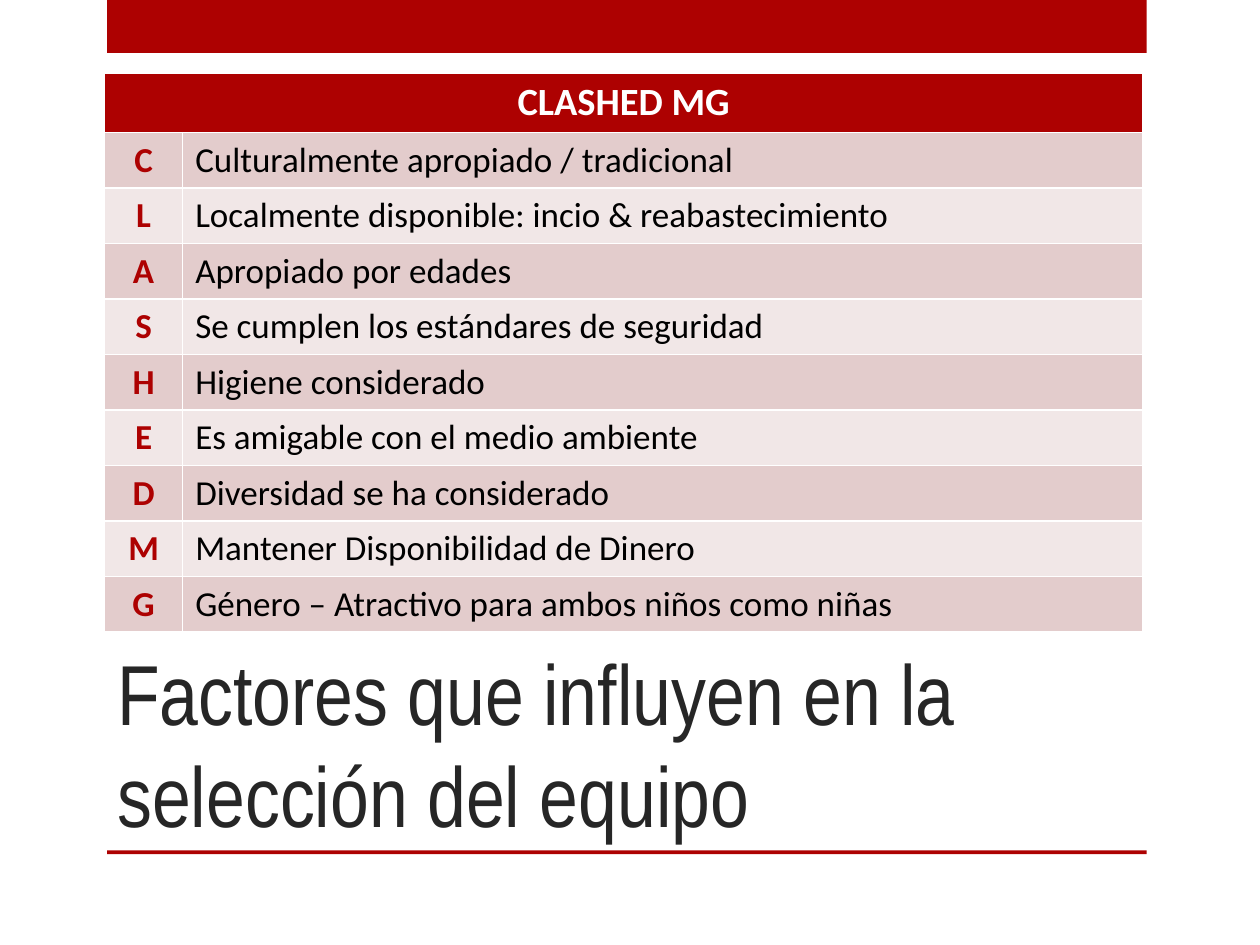
from pptx import Presentation
from pptx.dml.color import RGBColor
from pptx.enum.shapes import MSO_SHAPE
from pptx.enum.text import MSO_ANCHOR, MSO_AUTO_SIZE, PP_ALIGN
from pptx.util import Inches, Pt

RECTANGLE = MSO_SHAPE.RECTANGLE
BOTTOM = MSO_ANCHOR.BOTTOM
NO_AUTOFIT = MSO_AUTO_SIZE.NONE
LEFT, CENTER = PP_ALIGN.LEFT, PP_ALIGN.CENTER

# Content
TITLE = "Factores que influyen en la selección del equipo"
HEADING = "CLASHED MG"
FACTORS = [
    ("C", "Culturalmente apropiado / tradicional"),
    ("L", "Localmente disponible: incio & reabastecimiento"),
    ("A", "Apropiado por edades"),
    ("S", "Se cumplen los estándares de seguridad"),
    ("H", "Higiene considerado"),
    ("E", "Es amigable con el medio ambiente"),
    ("D", "Diversidad se ha considerado"),
    ("M", "Mantener Disponibilidad de Dinero"),
    ("G", "Género – Atractivo para ambos niños como niñas"),
]
COLORS = {
    "red": "AD0101",
    "title": "262626",
    "text": "000000",
    "white": "FFFFFF",
    "dark_band": "E3CCCC",
    "light_band": "F1E7E7",
}

# Layout, in inches
BARS = [(0, 0.42), (6.75, 0.03)]  # top, height
BAR_LEFT, BAR_WIDTH = 0.85, 8.25
CONTENT_LEFT = 0.83
TABLE_TOP = 0.58
COLUMN_WIDTHS = (0.62, 7.62)
HEADING_HEIGHT, FACTOR_HEIGHT = 0.46, 0.44


def color(name):
    return RGBColor.from_string(COLORS[name])


def write(frame, text, *, size, ink, font="Calibri", bold=False, align=LEFT):
    paragraph = frame.paragraphs[0]
    paragraph.alignment = align
    run = paragraph.add_run()
    run.text = text
    run.font.name = font
    run.font.size = Pt(size)
    run.font.bold = bold
    run.font.color.rgb = color(ink)


def fill_cell(cell, band, text, **text_format):
    cell.fill.solid()
    cell.fill.fore_color.rgb = color(band)
    write(cell.text_frame, text, **text_format)


def main():
    deck = Presentation()
    deck.slide_width, deck.slide_height = Inches(10), Inches(7.5)
    slide = deck.slides.add_slide(deck.slide_layouts[5])

    # Red bars above and below the content
    for top, height in BARS:
        bar = slide.shapes.add_shape(
            RECTANGLE, Inches(BAR_LEFT), Inches(top), Inches(BAR_WIDTH), Inches(height))
        bar.shadow.inherit = False
        bar.fill.solid()
        bar.fill.fore_color.rgb = color("red")
        bar.line.fill.background()

    # Title
    title = slide.shapes.title
    title.left, title.top = Inches(CONTENT_LEFT), Inches(5)
    title.width, title.height = Inches(7.42), Inches(1.75)
    frame = title.text_frame
    frame.word_wrap = True
    frame.auto_size = NO_AUTOFIT
    frame.vertical_anchor = BOTTOM
    write(frame, TITLE, size=48.6, ink="title", font="Arial Narrow")

    # Table: one heading row, then one row per factor
    table_height = HEADING_HEIGHT + FACTOR_HEIGHT * len(FACTORS)
    table = slide.shapes.add_table(
        len(FACTORS) + 1, len(COLUMN_WIDTHS), Inches(CONTENT_LEFT), Inches(TABLE_TOP),
        Inches(sum(COLUMN_WIDTHS)), Inches(table_height)).table
    for column, width in zip(table.columns, COLUMN_WIDTHS):
        column.width = Inches(width)
    for index, row in enumerate(table.rows):
        row.height = Inches(FACTOR_HEIGHT if index else HEADING_HEIGHT)

    heading = table.cell(0, 0)
    heading.merge(table.cell(0, 1))
    fill_cell(heading, "red", HEADING, size=22, ink="white", bold=True, align=CENTER)

    for index, (letter, factor) in enumerate(FACTORS, start=1):
        band = "dark_band" if index % 2 else "light_band"
        fill_cell(table.cell(index, 0), band, letter,
                  size=20, ink="red", bold=True, align=CENTER)
        fill_cell(table.cell(index, 1), band, factor, size=20, ink="text")

    deck.save("out.pptx")


if __name__ == "__main__":
    main()
